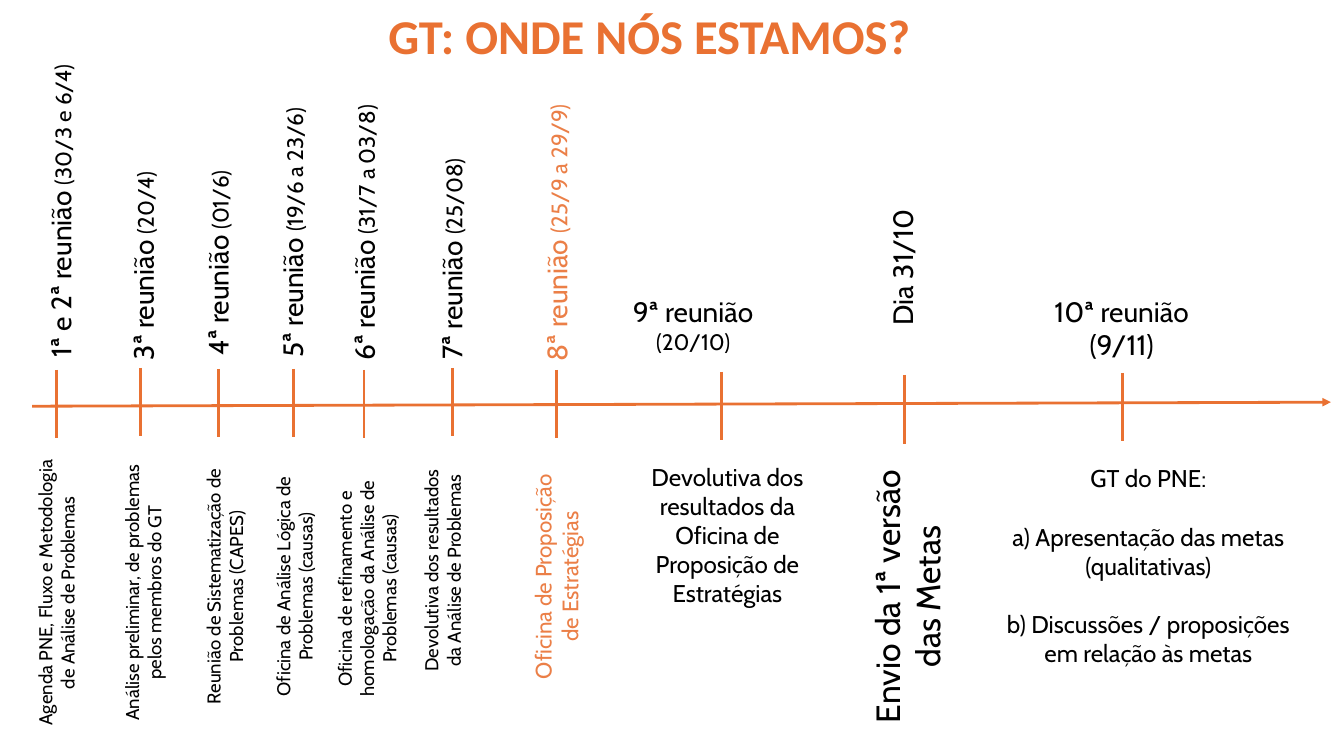
from lxml.etree import SubElement
from pptx import Presentation
from pptx.dml.color import RGBColor
from pptx.enum.shapes import MSO_CONNECTOR
from pptx.enum.text import MSO_ANCHOR, MSO_AUTO_SIZE, PP_ALIGN
from pptx.oxml.ns import qn
from pptx.util import Pt

PX = 9144  # EMU per px, 100 px to the inch
FONT = "Cabin"
COLORS = {"accent": "E97132", "current": "EB7F47", "text": "000000"}
TICK_HEIGHT = 68
NAME_SIZE, DATE_SIZE = 20, 16

# Tick x and top, in order along the axis
TICKS = [(56, 367), (139, 365), (217, 366), (291, 366), (361, 367),
         (449, 365), (552, 367), (716, 369), (897, 372), (1113, 370)]

# Meeting labels above the axis: name, date, centre x, centre y, length, color
MEETINGS = [
    ("1ª e 2ª reunião ", "(30/3 e 6/4)", 60, 209, 367, "text"),
    ("3ª reunião ", "(20/4)", 142, 264, 244, "text"),
    ("4ª reunião ", "(01/6)", 216, 261, 265, "text"),
    ("5ª reunião ", "(19/6 a 23/6)", 290, 231, 304, "text"),
    ("6ª reunião ", "(31/7 a 03/8)", 361, 231, 350, "text"),
    ("7ª reunião ", "(25/08)", 448, 257, 241, "text"),
    ("8ª reunião ", "(25/9 a 29/9)", 552, 231, 328, "current"),
    ("Dia 31/10", "", 895, 265, 258, "text"),
]

# Topics below the axis: text, centre x, centre y, length, thickness, size, color
TOPICS = [
    ("Agenda PNE, Fluxo e Metodologia de Análise de Problemas",
     56, 588, 295, 55, 13.3, "text"),
    ("Análise preliminar, de problemas pelos membros do GT",
     142, 588, 288, 55, 13.3, "text"),
    ("Reunião de Sistematização de Problemas (CAPES)",
     223, 582, 285, 55, 13.3, "text"),
    ("Oficina de Análise Lógica de Problemas (causas)",
     292, 582, 255, 55, 13.3, "text"),
    ("Oficina de refinamento e homologação da Análise de Problemas (causas)",
     364, 584, 288, 77, 13.3, "text"),
    ("Devolutiva dos resultados da Análise de Problemas",
     450, 566, 223, 77, 13.3, "text"),
    ("Oficina de Proposição de Estratégias",
     552, 572, 250, 64, 16, "current"),
    ("Envio da 1ª versão das Metas",
     900, 592, 325, 91, 24, "text"),
]

# Upright blocks: box, space before each later paragraph, (text, size) paragraphs
UPRIGHT = [
    ((596, 287, 183, 71), 0, [("9ª reunião", 20), ("(20/10)", 16)]),
    ((1021, 287, 183, 77), 0, [("10ª reunião", 20), ("(9/11)", 20)]),
    ((610, 454, 223, 156), 0,
     [("Devolutiva dos resultados da Oficina de Proposição de Estratégias", 17.3)]),
    ((972, 455, 334, 214), 21,
     [("GT do PNE:", 17.3),
      ("a) Apresentação das metas (qualitativas)", 17.3),
      ("b) Discussões / proposições em relação às metas", 17.3)]),
]


def rgb(name):
    return RGBColor.from_string(COLORS[name])


def style(font, size, color, name=FONT, bold=False):
    font.name, font.size, font.bold = name, Pt(size), bold
    font.color.rgb = rgb(color)


def add_title(slide, text):
    title = slide.shapes.title
    title.left, title.top, title.width, title.height = (
        px * PX for px in (29, 5, 1230, 66))
    frame = title.text_frame
    frame.text = text
    frame.word_wrap = True
    frame.auto_size = MSO_AUTO_SIZE.NONE
    frame.vertical_anchor = MSO_ANCHOR.MIDDLE
    paragraph = frame.paragraphs[0]
    paragraph.alignment = PP_ALIGN.CENTER
    paragraph.line_spacing = 0.9
    style(paragraph.runs[0].font, 34.7, "accent", "Calibri", True)


def add_line(slide, x1, y1, x2, y2, arrow=False):
    line = slide.shapes.add_connector(
        MSO_CONNECTOR.STRAIGHT, *(px * PX for px in (x1, y1, x2, y2)))
    line.line.color.rgb = rgb("accent")
    line.line.width = Pt(2)
    if arrow:
        SubElement(line.line._get_or_add_ln(), qn("a:tailEnd"), type="triangle")
    SubElement(line._element.spPr, qn("a:effectLst"))


def add_text(slide, box, paragraphs, color="text", gap=0):
    """Each paragraph is a list of (text, size) runs."""
    shape = slide.shapes.add_textbox(*(round(px * PX) for px in box))
    frame = shape.text_frame
    frame.word_wrap = True
    for index, runs in enumerate(paragraphs):
        paragraph = frame.add_paragraph() if index else frame.paragraphs[0]
        paragraph.alignment = PP_ALIGN.CENTER
        if index and gap:
            paragraph.space_before = Pt(gap)
        for text, size in runs:
            run = paragraph.add_run()
            run.text = text
            style(run.font, size, color)
    return shape


def add_vertical_text(slide, center_x, center_y, length, thickness, runs, color):
    box = (center_x - length / 2, center_y - thickness / 2, length, thickness)
    add_text(slide, box, [runs], color).rotation = 270


def main():
    presentation = Presentation()
    presentation.slide_width, presentation.slide_height = 1333 * PX, 750 * PX
    slide = presentation.slides.add_slide(presentation.slide_layouts[5])
    add_title(slide, "GT: ONDE NÓS ESTAMOS?")

    # Time axis with its ticks
    add_line(slide, 32, 403, 1320, 399, arrow=True)
    for x, top in TICKS:
        add_line(slide, x, top, x, top + TICK_HEIGHT)

    # Vertical labels and topics
    for name, date, x, y, length, color in MEETINGS:
        runs = [(name, NAME_SIZE)] + ([(date, DATE_SIZE)] if date else [])
        add_vertical_text(slide, x, y, length, 44, runs, color)
    for text, x, y, length, thickness, size, color in TOPICS:
        add_vertical_text(slide, x, y, length, thickness, [(text, size)], color)

    # Upright labels and topics
    for box, gap, paragraphs in UPRIGHT:
        add_text(slide, box, [[paragraph] for paragraph in paragraphs], gap=gap)

    presentation.save("out.pptx")


if __name__ == "__main__":
    main()
